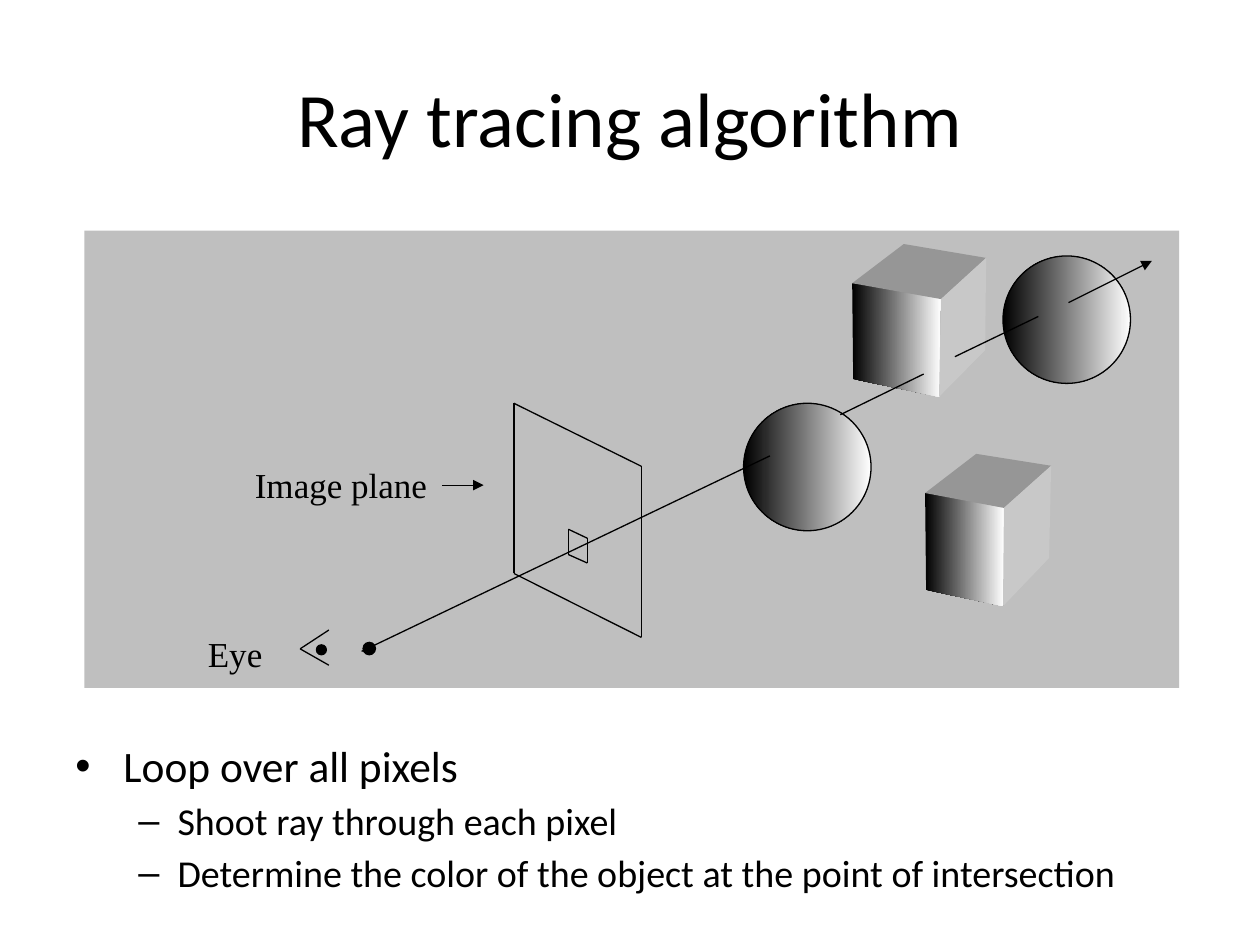
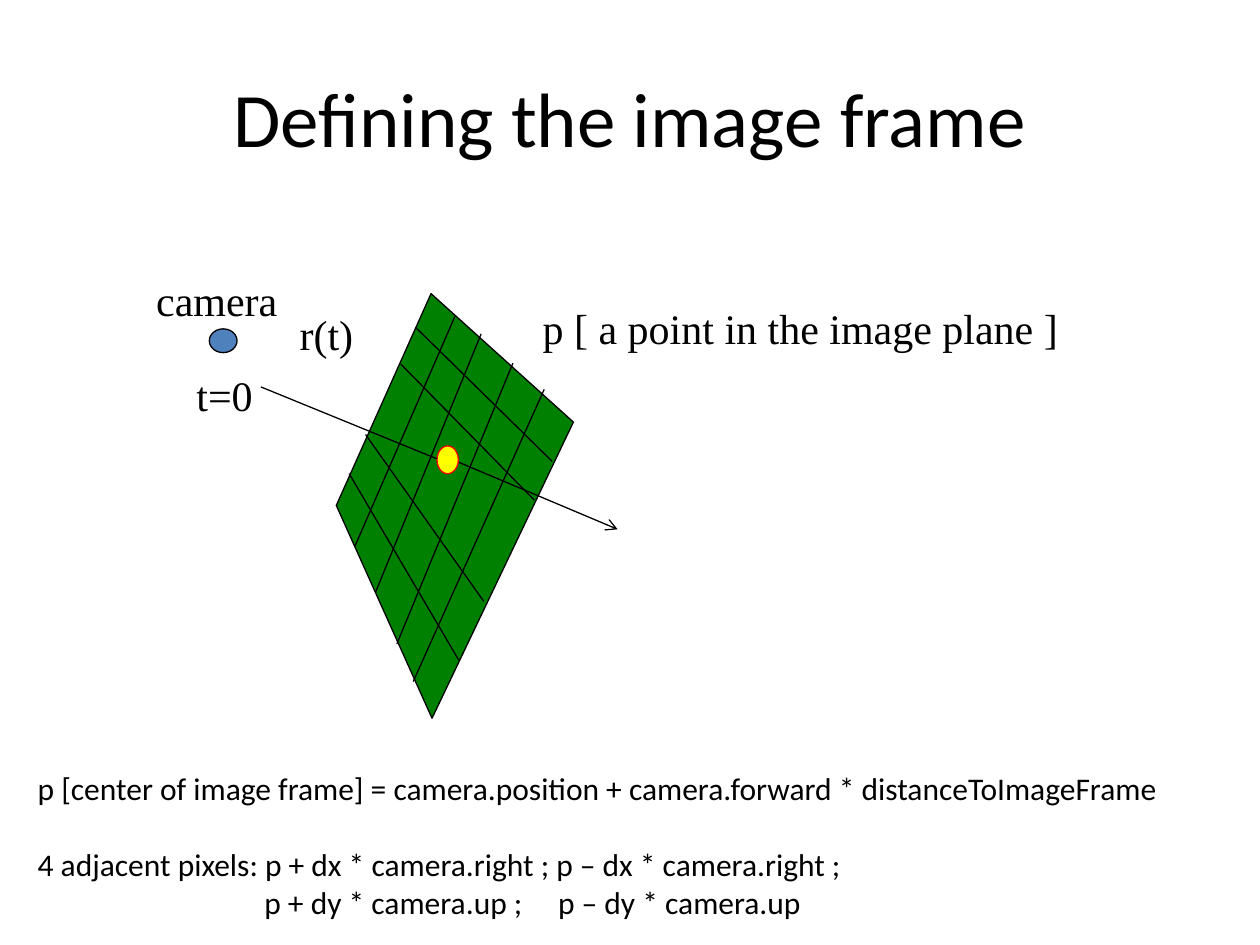
import itertools

import lxml.etree
import pptx
import pptx.dml.color
import pptx.enum.shapes
import pptx.enum.text
import pptx.oxml.ns
import pptx.util

Cm = pptx.util.Cm
Pt = pptx.util.Pt
ALIGN = pptx.enum.text.PP_ALIGN
SHAPES = pptx.enum.shapes.MSO_SHAPE

BLACK = "000000"
WHITE = "FFFFFF"
SANS = "Calibri"
SERIF = "Times New Roman"
SHADING = (BLACK, WHITE)
TITLE_AREA = (1.27, 0.76, 22.86, 3.18)

LEVELS = [
    {"bullet": "•", "size": 24.8, "margin": 0.97, "hanging": 0.97},
    {"bullet": "–", "size": 21.7, "margin": 2.06, "hanging": 0.79},
]
STEPS = [
    (0, "Loop over all pixels"),
    (1, "Shoot ray through each pixel"),
    (1, "Determine the color of the object at the point of intersection"),
]
STEPS_AREA = (1.27, 14.78, 22.5, 3.45)

SCENE_AREA = (1.7, 4.65, 22.07, 9.22)
SPHERE_SIZE = 2.57
SPHERES = [(14.99, 8.13), (20.22, 5.16)]
CUBES = [
    {"front": [(17.18, 5.71), (18.97, 6.03), (18.93, 8.0), (17.2, 7.64)],
     "back": [(18.22, 4.92), (19.88, 5.2), (19.86, 7.06)]},
    {"front": [(18.65, 9.94), (20.24, 10.24), (20.22, 12.22), (18.67, 11.89)],
     "back": [(19.68, 9.15), (21.19, 9.39), (21.15, 11.25)]},
]
CUBE_TOP, CUBE_SIDE = "969696", "C8C8C8"
IMAGE_PLANE = [(10.36, 8.13), (12.93, 9.4), (12.93, 12.85), (10.36, 11.56)]
PIXEL = [(11.46, 10.67), (11.84, 10.85), (11.84, 11.35), (11.46, 11.18)]
EYELIDS = [(6.63, 12.7), (6.05, 13.08), (6.63, 13.41)]
PUPIL = (6.38, 13.0, 0.2, 0.2)
RAY_ORIGIN = (7.32, 12.95, 0.25, 0.25)
PLANE_POINTER = ((8.92, 9.78), (9.75, 9.78))
RAY_PARTS = [
    ((7.29, 13.13), (15.52, 9.19)),
    ((16.94, 8.36), (18.62, 7.54)),
    ((19.25, 7.19), (20.93, 6.38)),
    ((21.54, 6.1), (23.22, 5.26)),
]
SCENE_LABELS = [
    ("Image plane", (4.83, 9.22, 4.09, 1.12)),
    ("Eye", (3.85, 12.62, 1.78, 1.12)),
]

FRAME = [(8.69, 5.92), (11.56, 8.51), (8.71, 14.48), (6.78, 10.19)]
FRAME_LINES = [
    ((8.38, 6.6), (11.13, 9.3)),
    ((7.37, 8.76), (9.75, 12.12)),
    ((8.08, 7.34), (10.77, 10.08)),
    ((7.04, 9.55), (9.25, 13.31)),
    ((9.17, 6.38), (7.16, 11.0)),
    ((9.7, 6.73), (7.57, 11.94)),
    ((10.34, 7.32), (8.0, 12.98)),
    ((10.97, 7.85), (8.33, 13.74)),
]
CAMERA = (4.22, 6.63, 0.56, 0.48)
FRAME_POINT = (8.81, 8.99, 0.43, 0.56)
RAY_TO_FRAME = ((5.26, 7.8), (8.81, 9.25))
RAY_BEYOND = ((9.25, 9.32), (12.45, 10.67))
FRAME_LABELS = [
    ("camera", (2.9, 5.41, 3.94, 1.3)),
    ("p [ a point in the image plane ]", (10.69, 5.97, 11.5, 1.27)),
    ("r(t)", (5.79, 6.1, 2, 1.3)),
    ("t=0", (3.71, 7.32, 2, 1.3)),
]
FORMULAS = [
    ("p [center of image frame] = camera.position + camera.forward * distanceToImageFrame", 0),
    ("4 adjacent pixels: p + dx * camera.right ; p – dx * camera.right ;", 22),
    ("\tp + dy * camera.up ;\tp – dy * camera.up", 0),
]
FORMULA_AREA = (0.51, 15.37, 23.93, 3.33)
FORMULA_TABS = (4.57, 10.49)


def color(value):
    return pptx.dml.color.RGBColor.from_string(value)


def add_element(parent, tag, **attributes):
    name = pptx.oxml.ns.qn(tag)
    return lxml.etree.SubElement(parent, name, {key: str(value) for key, value in attributes.items()})


def style_shape(shape, fill, line=None):
    shape.shadow.inherit = False
    if isinstance(fill, tuple):
        shape.fill.gradient()
        shape.fill.gradient_angle = 0
        for stop, shade in zip(shape.fill.gradient_stops, fill):
            stop.color.rgb = color(shade)
    else:
        shape.fill.solid()
        shape.fill.fore_color.rgb = color(fill)
    if line:
        shape.line.color.rgb = color(line)
        shape.line.width = Pt(0.75)
    else:
        shape.line.fill.background()


def add_preset(page, kind, area, fill, line=None):
    style_shape(page.shapes.add_shape(kind, *map(Cm, area)), fill, line)


def add_polygon(page, points, fill, line=None):
    corners = [(Cm(x), Cm(y)) for x, y in points]
    builder = page.shapes.build_freeform(*corners[0], scale=1.0)
    builder.add_line_segments(corners[1:], close=True)
    style_shape(builder.convert_to_shape(), fill, line)


def add_line(page, start, end, arrow=None):
    line = page.shapes.add_connector(
        pptx.enum.shapes.MSO_CONNECTOR.STRAIGHT, *map(Cm, start + end))
    line.line.color.rgb = color(BLACK)
    line.line.width = Pt(0.75)
    if arrow:
        add_element(line.line._get_or_add_ln(), "a:tailEnd", type=arrow)
    add_element(line._element.spPr, "a:effectLst")


def add_chain(page, points):
    for start, end in itertools.pairwise(points):
        add_line(page, start, end)


def add_box(page, area):
    box = page.shapes.add_textbox(*map(Cm, area))
    box.text_frame.word_wrap = True
    return box.text_frame


def next_para(frame, index):
    return frame.add_paragraph() if index else frame.paragraphs[0]


def add_span(para, text, size, font):
    span = para.add_run()
    span.text = text
    span.font.size = Pt(size)
    span.font.name = font
    span.font.color.rgb = color(BLACK)


def add_label(page, text, area, size, align):
    para = add_box(page, area).paragraphs[0]
    para.alignment = align
    add_span(para, text, size, SERIF)


def add_page(deck, title):
    page = deck.slides.add_slide(deck.slide_layouts[6])
    page.background.fill.solid()
    page.background.fill.fore_color.rgb = color(WHITE)
    frame = add_box(page, TITLE_AREA)
    frame.vertical_anchor = pptx.enum.text.MSO_ANCHOR.MIDDLE
    para = frame.paragraphs[0]
    para.alignment = ALIGN.CENTER
    add_span(para, title, 44, SANS)
    return page


def add_steps(page):
    frame = add_box(page, STEPS_AREA)
    for index, (depth, text) in enumerate(STEPS):
        level = LEVELS[depth]
        para = next_para(frame, index)
        para.level = depth
        properties = para._p.get_or_add_pPr()
        properties.set("marL", str(Cm(level["margin"])))
        properties.set("indent", str(-Cm(level["hanging"])))
        add_element(properties, "a:buFont", typeface="Arial")
        add_element(properties, "a:buChar", char=level["bullet"])
        if index:
            para.space_before = Pt(3.5)
        add_span(para, text, level["size"], SANS)


def add_cube(page, front, back):
    top_left, top_right, bottom_right, _ = front
    back_left, back_right, back_bottom = back
    add_polygon(page, front, SHADING)
    add_polygon(page, [top_left, back_left, back_right, top_right], CUBE_TOP)
    add_polygon(page, [top_right, back_right, back_bottom, bottom_right], CUBE_SIDE)


def add_formulas(page):
    frame = add_box(page, FORMULA_AREA)
    for index, (text, gap) in enumerate(FORMULAS):
        para = next_para(frame, index)
        if "\t" in text:
            tabs = add_element(para._p.get_or_add_pPr(), "a:tabLst")
            for position in FORMULA_TABS:
                add_element(tabs, "a:tab", pos=Cm(position), algn="l")
        if gap:
            para.space_before = Pt(gap)
        add_span(para, text, 18, SANS)


def build_algorithm(deck):
    page = add_page(deck, "Ray tracing algorithm")
    add_steps(page)
    add_preset(page, SHAPES.RECTANGLE, SCENE_AREA, "BFBFBF")
    for corner in SPHERES:
        add_preset(page, SHAPES.OVAL, corner + (SPHERE_SIZE, SPHERE_SIZE), SHADING, BLACK)
    for cube in CUBES:
        add_cube(page, **cube)
    for outline in (IMAGE_PLANE, PIXEL):
        add_chain(page, outline + outline[:1])
    add_chain(page, EYELIDS)
    for dot in (PUPIL, RAY_ORIGIN):
        add_preset(page, SHAPES.OVAL, dot, BLACK, BLACK)
    for text, area in SCENE_LABELS:
        add_label(page, text, area, 20, ALIGN.CENTER)
    add_line(page, *PLANE_POINTER, arrow="triangle")
    for part in RAY_PARTS:
        add_line(page, *part, arrow="triangle" if part == RAY_PARTS[-1] else None)


def build_frame(deck):
    page = add_page(deck, "Defining the image frame")
    add_polygon(page, FRAME, "008000", BLACK)
    add_preset(page, SHAPES.OVAL, CAMERA, "4F81BD", BLACK)
    for ends in FRAME_LINES:
        add_line(page, *ends)
    add_preset(page, SHAPES.OVAL, FRAME_POINT, "FFFF00", "FF0000")
    add_line(page, *RAY_TO_FRAME)
    add_line(page, *RAY_BEYOND, arrow="arrow")
    for text, area in FRAME_LABELS:
        add_label(page, text, area, 24, ALIGN.LEFT)
    add_formulas(page)


def main():
    deck = pptx.Presentation()
    deck.slide_width = Cm(25.4)
    deck.slide_height = Cm(19.05)
    build_algorithm(deck)
    build_frame(deck)
    deck.save("out.pptx")


if __name__ == "__main__":
    main()
